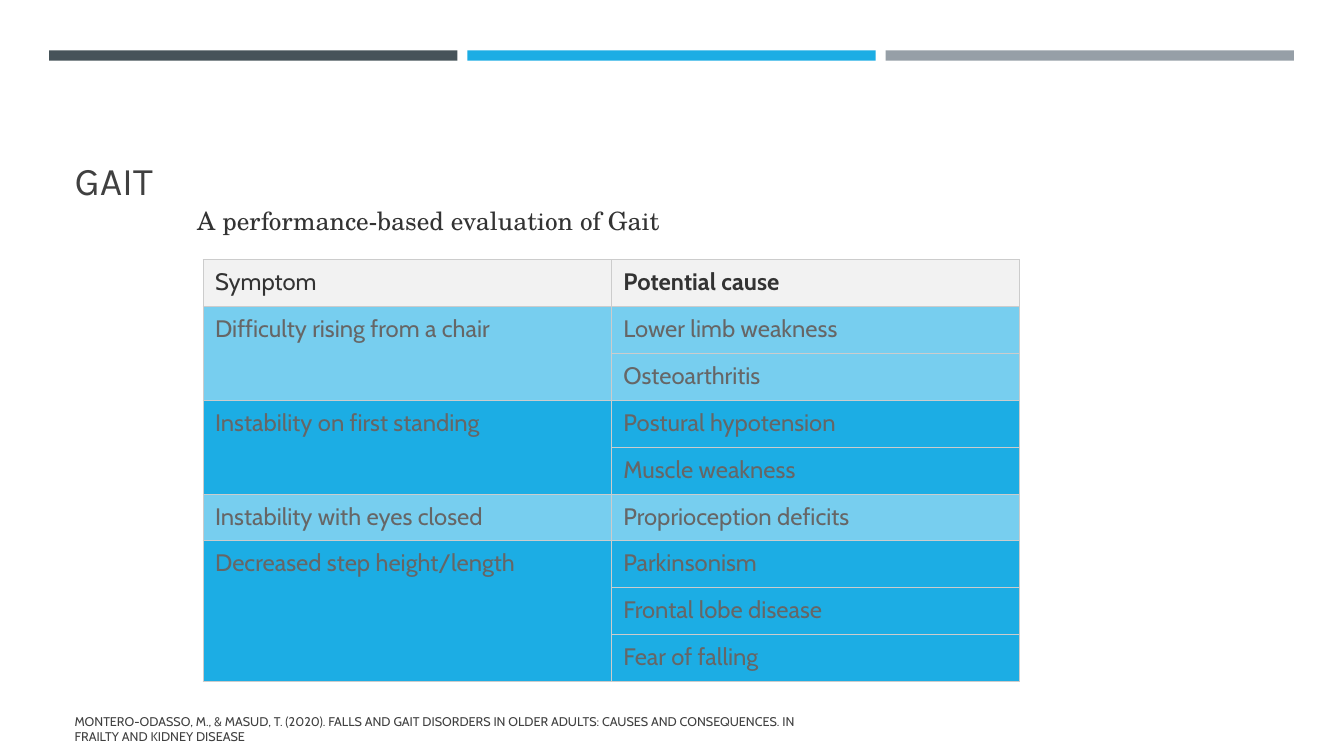
from pptx import Presentation
from pptx.dml.color import RGBColor
from pptx.enum.shapes import MSO_SHAPE
from pptx.enum.text import MSO_ANCHOR
from pptx.oxml import parse_xml
from pptx.oxml.ns import nsdecls
from pptx.util import Cm, Pt

COLORS = {
    "slate": "465359", "blue": "1CADE4", "grey": "969FA7",
    "light_blue": "77CEEF", "header": "F2F2F2", "border": "CCCCCC",
    "title": "404040", "dark": "333333", "body": "666666",
}
BAR_LEFT, BAR_WIDTH, BAR_PITCH = 1.24, 10.29, 10.54
ROW_HEIGHT = 1.18
HEADINGS = ("Symptom", "Potential cause")
SYMPTOMS = [
    ("Difficulty rising from a chair", ["Lower limb weakness", "Osteoarthritis"]),
    ("Instability on first standing", ["Postural hypotension", "Muscle weakness"]),
    ("Instability with eyes closed", ["Proprioception deficits"]),
    ("Decreased step height/length",
     ["Parkinsonism", "Frontal lobe disease", "Fear of falling"]),
]
CITATION = ("MONTERO-ODASSO, M., & MASUD, T. (2020). FALLS AND GAIT DISORDERS IN "
            "OLDER ADULTS: CAUSES AND CONSEQUENCES. IN FRAILTY AND KIDNEY DISEASE")


def rgb(name):
    return RGBColor.from_string(COLORS[name])


class SlideBuilder:
    def __init__(self, page):
        self.page = page
        self.styles = {
            "title": {"name": "Karla", "size": Pt(28), "color": "title"},
            "subtitle": {"name": "TeX Gyre Schola", "size": Pt(18), "color": "dark"},
            "citation": {"name": "Cabin", "size": Pt(9), "color": "title"},
            "symptom_head": {"name": "Cabin", "size": Pt(17), "color": "dark", "bold": False},
            "cause_head": {"name": "Cabin", "size": Pt(17), "color": "dark", "bold": True},
            "cell": {"name": "Cabin", "size": Pt(17), "color": "body", "bold": False},
        }

    def add_span(self, frame, text, style):
        span = frame.paragraphs[0].add_run()
        span.text = text
        for key, value in self.styles[style].items():
            if key == "color":
                span.font.color.rgb = rgb(value)
            else:
                setattr(span.font, key, value)

    def bar(self, left, top, width, height, color):
        shape = self.page.shapes.add_shape(
            MSO_SHAPE.RECTANGLE, Cm(left), Cm(top), Cm(width), Cm(height))
        shape.shadow.inherit = False
        shape.fill.solid()
        shape.fill.fore_color.rgb = rgb(color)
        shape.line.fill.background()

    def text(self, left, top, width, height, text, style, anchor=MSO_ANCHOR.TOP):
        box = self.page.shapes.add_textbox(Cm(left), Cm(top), Cm(width), Cm(height))
        frame = box.text_frame
        frame.word_wrap = True
        frame.vertical_anchor = anchor
        self.add_span(frame, text, style)

    def cell(self, cell, text, style, color):
        margins = {"margin_left": 0.3, "margin_right": 0.3,
                   "margin_top": 0.2, "margin_bottom": 0.2}
        for key, value in margins.items():
            setattr(cell, key, Cm(value))
        if text:
            self.add_span(cell.text_frame, text, style)
        properties = cell._tc.get_or_add_tcPr()
        for side in ("lnL", "lnR", "lnT", "lnB"):
            properties.append(parse_xml(
                f'<a:{side} {nsdecls("a")} w="{Pt(0.75)}"><a:solidFill>'
                f'<a:srgbClr val="{COLORS["border"]}"/></a:solidFill></a:{side}>'))
        cell.fill.solid()
        cell.fill.fore_color.rgb = rgb(color)

    def symptom_table(self, left, top, width, headings, groups):
        """Draw one row per cause, with each symptom merged over its causes."""
        count = 1 + sum(len(causes) for _, causes in groups)
        table = self.page.shapes.add_table(
            count, 2, Cm(left), Cm(top), Cm(width), Cm(ROW_HEIGHT * count)).table
        for row in table.rows:
            row.height = Cm(ROW_HEIGHT)
        for column, style in enumerate(("symptom_head", "cause_head")):
            self.cell(table.cell(0, column), headings[column], style, "header")
        first = 1
        for index, (symptom, causes) in enumerate(groups):
            color = ("light_blue", "blue")[index % 2]
            for offset, cause in enumerate(causes):
                label = "" if offset else symptom
                self.cell(table.cell(first + offset, 0), label, "cell", color)
                self.cell(table.cell(first + offset, 1), cause, "cell", color)
            last = first + len(causes) - 1
            if last > first:
                table.cell(first, 0).merge(table.cell(last, 0))
            first = last + 1


def main():
    deck = Presentation()
    deck.slide_width, deck.slide_height = Cm(33.87), Cm(19.05)
    builder = SlideBuilder(deck.slides.add_slide(deck.slide_layouts[6]))
    for index, color in enumerate(("slate", "blue", "grey")):
        builder.bar(BAR_LEFT + index * BAR_PITCH, 1.27, BAR_WIDTH, 0.26, color)
    builder.text(1.63, 1.96, 30.63, 3.3, "GAIT", "title", MSO_ANCHOR.BOTTOM)
    builder.symptom_table(5.12, 6.55, 20.58, HEADINGS, SYMPTOMS)
    builder.text(4.72, 5.05, 14.38, 2.57,
                 "A performance-based evaluation of Gait", "subtitle")
    builder.text(1.63, 17.86, 19.2, 1.02, CITATION, "citation", MSO_ANCHOR.MIDDLE)
    deck.save("out.pptx")


if __name__ == "__main__":
    main()
